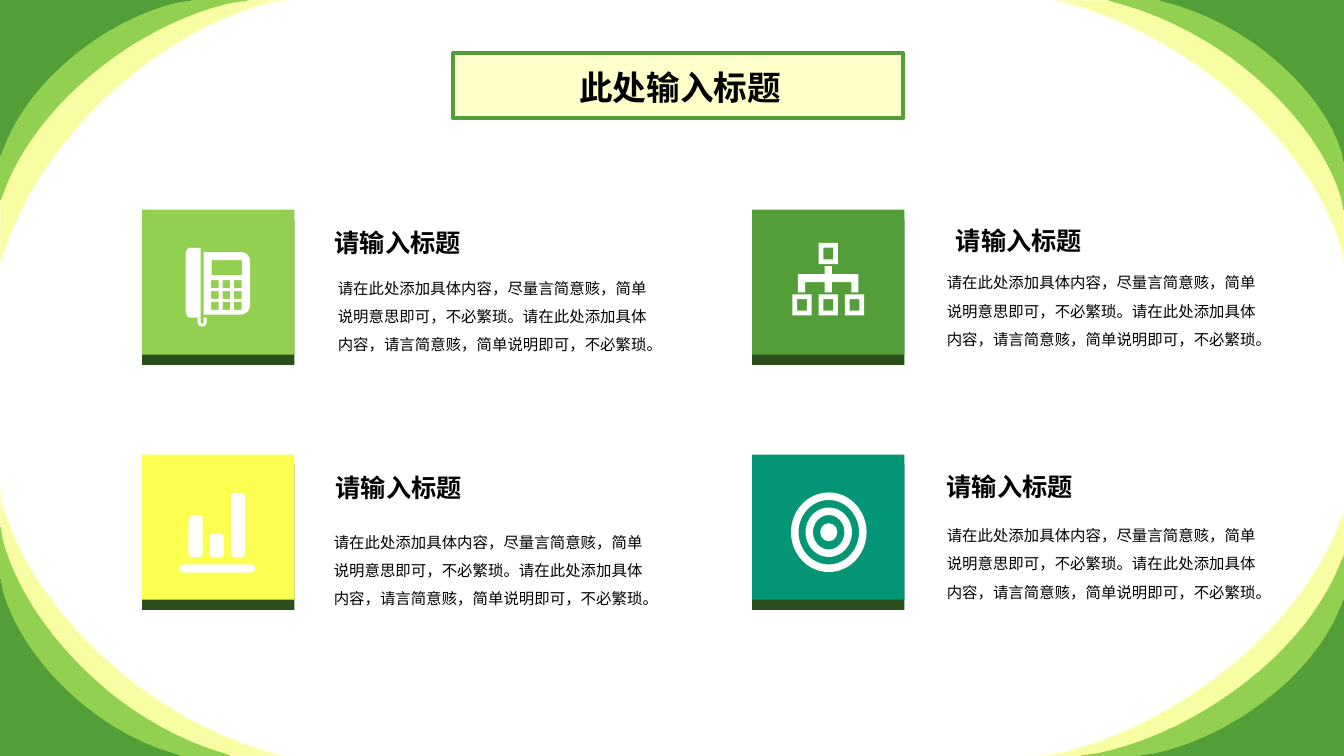
import math
import pptx
import pptx.util
import pptx.dml.color
import pptx.enum.shapes
import pptx.enum.text
import pptx.oxml.ns
import lxml.etree

SHAPE = pptx.enum.shapes.MSO_SHAPE
ANCHOR = pptx.enum.text.MSO_ANCHOR
COLUMNS, ROWS = 133.3, 75  # square cells of a tenth of an inch
FONT = "Noto Sans CJK SC"
WHITE, BLACK, SHADE = "FFFFFF", "000000", "2A4F1C"
LIME, GREEN, CREAM = "92D050", "549E39", "FEFFC9"
HEADING = "请输入标题"
BODY = ("请在此处添加具体内容，尽量言简意赅，简单说明意思即可，不必繁琐。"
        "请在此处添加具体内容，请言简意赅，简单说明即可，不必繁琐。")


def cells(count):
    return pptx.util.Inches(count / 10)


def color(value):
    return pptx.dml.color.RGBColor.from_string(value)


def arc(x, y, width, height, start, end, steps=12):
    """Points on an ellipse around (x, y); angles in degrees, clockwise."""
    angles = [math.radians(start + (end - start) * i / steps) for i in range(steps + 1)]
    return [(x + width * math.cos(a), y + height * math.sin(a)) for a in angles]


def bezier(a, b, c, d, steps=16):
    points = []
    for i in range(steps + 1):
        t = i / steps
        weights = ((1 - t) ** 3, 3 * t * (1 - t) ** 2, 3 * t * t * (1 - t), t ** 3)
        points.append(tuple(sum(w * p[axis] for w, p in zip(weights, (a, b, c, d)))
                            for axis in (0, 1)))
    return points


def rectangle(x, y, width, height):
    return [(x, y), (x, y + height), (x + width, y + height), (x + width, y)]


class Painter:
    """Draws on one slide; lengths are grid cells counted from the origin."""

    def __init__(self, page):
        self.page = page
        self.origin = (0, 0)

    def paint(self, shape, fill, line=None, weight=1):
        shape.shadow.inherit = False
        shape.fill.solid()
        shape.fill.fore_color.rgb = color(fill)
        if line:
            shape.line.color.rgb = color(line)
            shape.line.width = pptx.util.Pt(weight)
        else:
            shape.line.fill.background()

    def preset(self, kind, x, y, width, height, fill=WHITE, adjust=None, line=None, weight=1):
        left, top = self.origin
        shape = self.page.shapes.add_shape(
            kind, cells(left + x), cells(top + y), cells(width), cells(height))
        if adjust is not None:
            shape.adjustments[0] = adjust
        self.paint(shape, fill, line, weight)

    def outline(self, contours, fill=WHITE, line=None):
        left, top = self.origin
        placed = [[(cells(left + x), cells(top + y)) for x, y in contour]
                  for contour in contours]
        builder = self.page.shapes.build_freeform(*placed[0][0], scale=1.0)
        for index, contour in enumerate(placed):
            if index:
                builder.move_to(*contour[0])
            builder.add_line_segments(contour[1:], close=True)
        self.paint(builder.convert_to_shape(), fill, line)

    def set_text(self, frame, text, size, bold=False):
        frame.text = text
        for span in frame.paragraphs[0].runs:
            span.font.size = pptx.util.Pt(size)
            span.font.bold = bold
            span.font.name = FONT
            span.font.color.rgb = color(BLACK)
            east = lxml.etree.Element(pptx.oxml.ns.qn("a:ea"), typeface=FONT)
            span.font._element.find(pptx.oxml.ns.qn("a:latin")).addnext(east)

    def text(self, x, y, width, height, text, size, bold=False, wrap=True,
             anchor=ANCHOR.TOP, spacing=None):
        left, top = self.origin
        box = self.page.shapes.add_textbox(
            cells(left + x), cells(top + y), cells(width), cells(height))
        frame = box.text_frame
        frame.margin_left = cells(4.2)
        frame.margin_top = frame.margin_right = frame.margin_bottom = 0
        frame.word_wrap = wrap
        frame.vertical_anchor = anchor
        self.set_text(frame, text, size, bold)
        if spacing:
            frame.paragraphs[0].line_spacing = pptx.util.Pt(spacing)

    def title(self, x, y, width, height, text):
        box = self.page.shapes.title
        box.left, box.top, box.width, box.height = map(cells, (x, y, width, height))
        frame = box.text_frame
        frame.word_wrap = True
        frame.vertical_anchor = ANCHOR.TOP
        frame.auto_size = pptx.enum.text.MSO_AUTO_SIZE.SHAPE_TO_FIT_TEXT
        self.set_text(frame, text, 24, bold=True)
        frame.paragraphs[0].alignment = pptx.enum.text.PP_ALIGN.CENTER
        self.page.shapes._spTree.append(box._element)  # in front of its frame

    def card(self, x, y, fill, icon, heading_at, body_at):
        self.origin = (x, y)
        self.preset(SHAPE.RECTANGLE, 0, 1, 15.1, 14.4, SHADE)
        self.preset(SHAPE.RECTANGLE, 0, 0, 15.1, 14.4, fill)
        icon(self)
        self.text(*heading_at, 27.5, 4.1, HEADING, 18, bold=True, wrap=False,
                  anchor=ANCHOR.MIDDLE)
        self.text(*body_at, 35.2, 7.3, BODY, 11, spacing=20)
        self.origin = (0, 0)

    def corner(self, right, bottom, turned, sizes):
        curve = [(0, 1)]
        curve += bezier((0.01, 0.94), (0.07, 0.72), (0.23, 0.48), (0.47, 0.28))
        curve += bezier((0.47, 0.28), (0.63, 0.15), (0.8, 0.06), (0.97, 0.01))
        curve += [(1, 0), (0, 0)]
        if turned:
            curve = [(v, u) for u, v in curve]
        bands = (("F8FCA2", CREAM), (LIME, LIME), (GREEN, GREEN))
        for (width, height), (fill, line) in zip(sizes, bands):
            points = [(COLUMNS - u * width if right else u * width,
                       ROWS - v * height if bottom else v * height) for u, v in curve]
            self.outline([points], fill, line)


def phone_icon(painter):
    body = [(6.1, 4.2), *arc(9.8, 5.1, 0.9, 0.9, -90, 0),
            *arc(9.8, 9.5, 0.9, 0.9, 0, 90), (6.1, 10.4)]
    screen = rectangle(6.9, 5, 3, 1.5)
    keys = [rectangle(6.85 + 1.13 * i, 7 + 1.08 * j, 0.75, 0.78)
            for j in range(3) for i in range(3)]
    painter.outline([body, screen, *keys])
    painter.outline([[(5.8, 3.8), (5.8, 10.7), *arc(4.7, 9.9, 0.4, 0.8, 90, 180),
                      *arc(4.7, 4.6, 0.4, 0.8, 180, 270)]])
    painter.outline([[(6.4, 10.7), *arc(5.95, 11.15, 0.45, 0.45, 0, 180), (5.5, 10.7),
                      (5.8, 10.7), *arc(5.95, 11.15, 0.15, 0.15, 180, 0), (6.1, 10.7)]])


def hierarchy_icon(painter):
    for x, y in [(9.2, 8.4), (6.6, 8.4), (4, 8.4), (6.6, 3.3)]:
        painter.preset(SHAPE.FRAME, x, y, 1.9, 2.1, adjust=0.25)
    half = [(0.37, 5.6), (0.37, 6.4), (3, 6.4), (3, 8.2), (2.3, 8.2), (2.3, 7.2),
            (0.37, 7.2), (0.37, 8.2)]
    middle = 7.55
    painter.outline([[(middle + x, y) for x, y in half]
                     + [(middle - x, y) for x, y in reversed(half)]])


def target_icon(painter):
    for kind, width, height, adjust in [(SHAPE.DONUT, 7.5, 7.9, 0.1),
                                        (SHAPE.DONUT, 4.6, 4.9, 0.16),
                                        (SHAPE.OVAL, 1.7, 1.8, None)]:
        painter.preset(kind, 7.6 - width / 2, 7.7 - height / 2, width, height, adjust=adjust)


def bars_icon(painter):
    for i, height in enumerate((4.2, 2.4, 6.4)):
        painter.preset(SHAPE.ROUNDED_RECTANGLE, 4.6 + 2.1 * i, 10.2 - height, 1.4, height,
                       adjust=0.3)
    painter.preset(SHAPE.ROUNDED_RECTANGLE, 3.7, 10.9, 7.5, 0.8, adjust=0.5)


def main():
    deck = pptx.Presentation()
    deck.slide_width, deck.slide_height = cells(COLUMNS), cells(ROWS)
    painter = Painter(deck.slides.add_slide(deck.slide_layouts[5]))

    # Four cards: heading and body places are relative to the tile
    left, right, upper, lower = 14.1, 74.6, 20.8, 45.1
    painter.card(left, upper, LIME, phone_icon, (14.9, 1.2), (15.2, 5.9))
    painter.card(right, upper, GREEN, hierarchy_icon, (16, 1), (15.1, 5.4))
    painter.card(right, lower, "029676", target_icon, (15.1, 1.1), (15.1, 6.2))
    painter.card(left, lower, "FBFF4F", bars_icon, (15, 1.2), (14.8, 6.8))

    # Curved bands in the corners, widest first
    painter.corner(False, False, True, [(28.5, 26.1), (24.5, 19.8), (18.9, 15.4)])
    painter.corner(True, False, False, [(28.5, 26.1), (23.3, 20.8), (18.2, 16)])
    painter.corner(False, True, False, [(27.9, 26.4), (22.8, 22.7), (17.8, 17.5)])
    painter.corner(True, True, True, [(30.3, 24.2), (26, 19.8), (20.1, 15.4)])

    # Framed title
    painter.preset(SHAPE.RECTANGLE, 44.9, 5.3, 44.7, 6.4, CREAM, line=GREEN, weight=3)
    painter.title(47.5, 6.1, 39.9, 4.2, "此处输入标题")
    deck.save("out.pptx")


if __name__ == "__main__":
    main()
